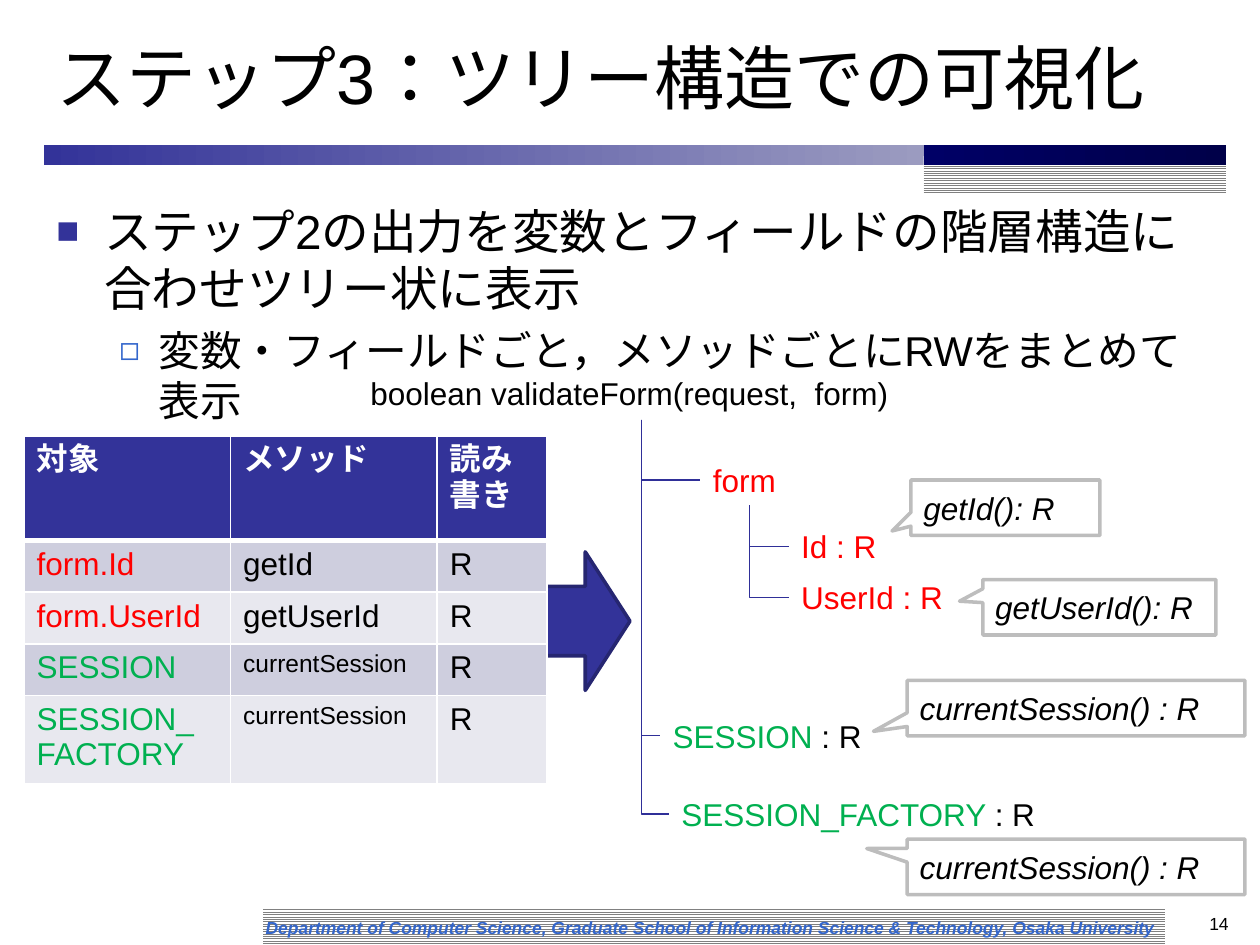
"""Build the slide that shows the tree view of variables and fields."""
from dataclasses import dataclass

from lxml.etree import SubElement
from pptx import Presentation
from pptx.dml.color import RGBColor
from pptx.enum.dml import MSO_PATTERN
from pptx.enum.lang import MSO_LANGUAGE_ID as Language
from pptx.enum.shapes import MSO_CONNECTOR, MSO_SHAPE
from pptx.enum.text import MSO_ANCHOR, PP_ALIGN
from pptx.oxml.ns import qn
from pptx.util import Inches, Pt

COLOURS = {
    "black": "000000", "white": "FFFFFF", "red": "FF0000", "green": "00B050",
    "indigo": "333399", "indigo_edge": "262671", "branch": "2F2F98",
    "lavender": "9B9BC0", "navy": "000066", "navy_dark": "000049",
    "blue": "3366CC", "gray": "808080", "callout_edge": "BDBDBD",
    "band_dark": "CECEDE", "band_light": "E8E8EF",
}


@dataclass
class Span:
    text: str
    colour: str = "black"


@dataclass
class Label:
    left: float
    top: float
    width: float
    spans: list[Span]


@dataclass
class Callout:
    text: str
    left: float
    top: float
    width: float
    tip: tuple[float, float]


@dataclass
class Tree:
    left: float
    top: float
    ends: list[tuple[float, float]]


@dataclass
class Bullet:
    text: str
    size: float
    margin: float
    indent: float
    mark: str
    colour: str
    level: int = 0
    before: float = 0


LABELS = [
    Label(2.84, 2.92, 4.49, [Span("boolean validateForm(request,  form)")]),
    Label(5.56, 3.61, 0.78, [Span("form", "red")]),
    Label(6.26, 4.13, 0.81, [Span("Id : R", "red")]),
    Label(6.26, 4.54, 1.34, [Span("UserId : R", "red")]),
    Label(5.24, 5.64, 1.72, [Span("SESSION ", "green"), Span(": R")]),
    Label(5.31, 6.26, 3.04, [Span("SESSION_FACTORY ", "green"), Span(": R")]),
]
CALLOUTS = [
    Callout("currentSession() : R", 7.2, 5.4, 2.68, (-0.6, 0.42)),
    Callout("currentSession() : R", 7.2, 6.66, 2.68, (-0.62, -0.33)),
    Callout("getId(): R", 7.23, 3.81, 1.5, (-0.6, 0.42)),
    Callout("getUserId(): R", 7.8, 4.6, 1.85, (-0.6, -0.11)),
]
TREES = [
    Tree(5.09, 3.33, [(5.56, 3.81), (5.24, 5.84), (5.31, 6.46)]),
    Tree(5.95, 4.01, [(6.26, 4.34), (6.26, 4.74)]),
]
BULLETS = [
    Bullet("ステップ2の出力を変数とフィールドの階層構造に合わせツリー状に表示",
           27.2, 0.38, -0.38, "■", "indigo"),
    Bullet("変数・フィールドごと，メソッドごとにRWをまとめて表示",
           23.8, 0.81, -0.31, "◻", "blue", level=1, before=5),
]
HEADINGS = ["対象", "メソッド", "読み書き"]
COLUMN_WIDTHS = [1.64, 1.64, 0.87]
ROW_HEIGHTS = [0.83, 0.41, 0.41, 0.41, 0.66]
RECORDS = [
    ("form.Id", "getId", "red", 18),
    ("form.UserId", "getUserId", "red", 18),
    ("SESSION", "currentSession", "green", 14),
    ("SESSION_\nFACTORY", "currentSession", "green", 14),
]


def rgb(name: str) -> RGBColor:
    """Return the named colour."""
    return RGBColor.from_string(COLOURS[name])


def add_span(para, text: str, *, size: float = 18, colour: str = "black",
             bold: bool = False, italic: bool = False) -> None:
    """Append formatted text to a paragraph."""
    span = para.add_run()
    span.text = text
    span.font.name = "Arial"
    span.font.size = Pt(size)
    span.font.color.rgb = rgb(colour)
    span.font.bold = bold
    span.font.italic = italic
    span.font.language_id = Language.JAPANESE
    SubElement(span.font._element, qn("a:ea"), typeface="Arial")


def add_box(page, left: float, top: float, width: float, height: float,
            wrap: bool = True, anchor=MSO_ANCHOR.TOP):
    """Add an empty text box and return its text frame."""
    frame = page.shapes.add_textbox(*map(Inches, (left, top, width, height))).text_frame
    frame.word_wrap = wrap
    frame.vertical_anchor = anchor
    return frame


def add_block(page, kind, left: float, top: float, width: float, height: float):
    """Add a preset shape without shadow or outline."""
    block = page.shapes.add_shape(kind, *map(Inches, (left, top, width, height)))
    block.shadow.inherit = False
    block.line.fill.background()
    return block


def add_stripes(page, left: float, top: float, width: float) -> None:
    """Add a rectangle of thin gray lines."""
    fill = add_block(page, MSO_SHAPE.RECTANGLE, left, top, width, 0.3).fill
    fill.patterned()
    fill.pattern = MSO_PATTERN.LIGHT_HORIZONTAL
    fill.fore_color.rgb = rgb("gray")
    fill.back_color.rgb = rgb("white")


def add_gradient(page, left: float, width: float, colours: tuple[str, str]) -> None:
    """Add a part of the title rule that shades from left to right."""
    fill = add_block(page, MSO_SHAPE.RECTANGLE, left, 1.15, width, 0.16).fill
    fill.gradient()
    fill.gradient_angle = 0
    for stop, colour in zip(fill.gradient_stops, colours):
        stop.color.rgb = rgb(colour)


def add_bullet(para, bullet: Bullet) -> None:
    """Fill a paragraph with a bulleted text."""
    para.level = bullet.level
    para.space_before = Pt(bullet.before)
    props = para._p.get_or_add_pPr()
    props.set("marL", str(Inches(bullet.margin)))
    props.set("indent", str(Inches(bullet.indent)))
    SubElement(SubElement(props, qn("a:buClr")), qn("a:srgbClr"), val=COLOURS[bullet.colour])
    SubElement(props, qn("a:buSzPct"), val="80000")
    SubElement(props, qn("a:buFont"), typeface="Arial")
    SubElement(props, qn("a:buChar"), char=bullet.mark)
    add_span(para, bullet.text, size=bullet.size)


def add_branch(page, left: float, top: float, right: float, bottom: float) -> None:
    """Add an elbow that runs down and then right."""
    across, down = right - left, bottom - top
    x, y = (left + right - down) / 2, (top + bottom - across) / 2
    branch = page.shapes.add_connector(
        MSO_CONNECTOR.ELBOW, *map(Inches, (x, y, x + down, y + across)))
    branch.line.color.rgb = rgb("branch")
    branch.line.width = Pt(0.75)
    props = branch._element.spPr
    props.find(qn("a:prstGeom")).set("prst", "bentConnector2")
    turn = props.find(qn("a:xfrm"))
    turn.set("rot", str(270 * 60000))
    turn.set("flipH", "1")
    SubElement(props, qn("a:effectLst"))


def add_callout(page, callout: Callout) -> None:
    """Add a speech callout with its pointer."""
    block = add_block(page, MSO_SHAPE.RECTANGULAR_CALLOUT,
                      callout.left, callout.top, callout.width, 0.44)
    block.adjustments[0], block.adjustments[1] = callout.tip
    paint(block, "white", "callout_edge")
    block.text_frame.vertical_anchor = MSO_ANCHOR.MIDDLE
    para = block.text_frame.paragraphs[0]
    para.alignment = PP_ALIGN.LEFT
    add_span(para, callout.text, italic=True)


def paint(block, fill: str, edge: str) -> None:
    """Give a shape a plain fill and a thick outline."""
    block.fill.solid()
    block.fill.fore_color.rgb = rgb(fill)
    block.line.color.rgb = rgb(edge)
    block.line.width = Pt(2)


def fill_cell(cell, text: str, fill: str, bottom: float = 1, **style) -> None:
    """Write a table cell with white borders."""
    props = cell._tc.get_or_add_tcPr()
    for side, width in {"L": 1, "R": 1, "T": 1, "B": bottom}.items():
        edge = SubElement(props, qn(f"a:ln{side}"), w=str(Pt(width)))
        SubElement(SubElement(edge, qn("a:solidFill")), qn("a:srgbClr"), val=COLOURS["white"])
    cell.fill.solid()
    cell.fill.fore_color.rgb = rgb(fill)
    cell.text = text
    for para in cell.text_frame.paragraphs:
        line = para.text
        para.clear()
        add_span(para, line, **style)


def add_access_table(page) -> None:
    """Add the table of targets, methods and access kinds."""
    size = sum(COLUMN_WIDTHS), sum(ROW_HEIGHTS)
    table = page.shapes.add_table(5, 3, *map(Inches, (0.19, 3.46, *size))).table
    for column, width in zip(table.columns, COLUMN_WIDTHS):
        column.width = Inches(width)
    for row, height in zip(table.rows, ROW_HEIGHTS):
        row.height = Inches(height)
    for cell, heading in zip(table.rows[0].cells, HEADINGS):
        fill_cell(cell, heading, "indigo", bottom=3, colour="white", bold=True)
    for number, (target, method, colour, size) in enumerate(RECORDS, 1):
        fill = "band_dark" if number % 2 else "band_light"
        fill_cell(table.cell(number, 0), target, fill, colour=colour)
        fill_cell(table.cell(number, 1), method, fill, size=size)
        fill_cell(table.cell(number, 2), "R", fill)


def main() -> None:
    """Build and save the deck."""
    deck = Presentation()
    deck.slide_width, deck.slide_height = Inches(10), Inches(7.5)
    page = deck.slides.add_slide(deck.slide_layouts[6])
    add_stripes(page, 2.09, 7.2, 7.16)
    add_gradient(page, 0.35, 6.98, ("indigo", "lavender"))
    add_stripes(page, 7.33, 1.24, 2.4)
    add_gradient(page, 7.33, 2.4, ("navy", "navy_dark"))
    footer = add_box(page, 2.01, 7.23, 7.32, 0.27, anchor=MSO_ANCHOR.MIDDLE)
    add_span(footer.paragraphs[0], "Department of Computer Science, Graduate School of "
             "Information Science & Technology, Osaka University",
             size=10, colour="blue", bold=True, italic=True)
    title = add_box(page, 0.35, 0.13, 9.38, 0.95, anchor=MSO_ANCHOR.MIDDLE)
    add_span(title.paragraphs[0], "ステップ3：ツリー構造での可視化", size=40)
    arrow = add_block(page, MSO_SHAPE.RIGHT_ARROW, 4.29, 4.38, 0.71, 1.1)
    paint(arrow, "indigo", "indigo_edge")
    body = add_box(page, 0.35, 1.55, 9.37, 1.34)
    for para, bullet in zip((body.paragraphs[0], body.add_paragraph()), BULLETS):
        add_bullet(para, bullet)
    number = add_box(page, 9.25, 7.2, 0.6, 0.3).paragraphs[0]
    number.alignment = PP_ALIGN.RIGHT
    add_span(number, "14", size=10)
    add_access_table(page)
    for label in LABELS:
        frame = add_box(page, label.left, label.top, label.width, 0.4, wrap=False)
        for span in label.spans:
            add_span(frame.paragraphs[0], span.text, colour=span.colour)
    for tree in TREES:
        for right, bottom in tree.ends:
            add_branch(page, tree.left, tree.top, right, bottom)
    for callout in CALLOUTS:
        add_callout(page, callout)
    deck.save("out.pptx")


if __name__ == "__main__":
    main()
